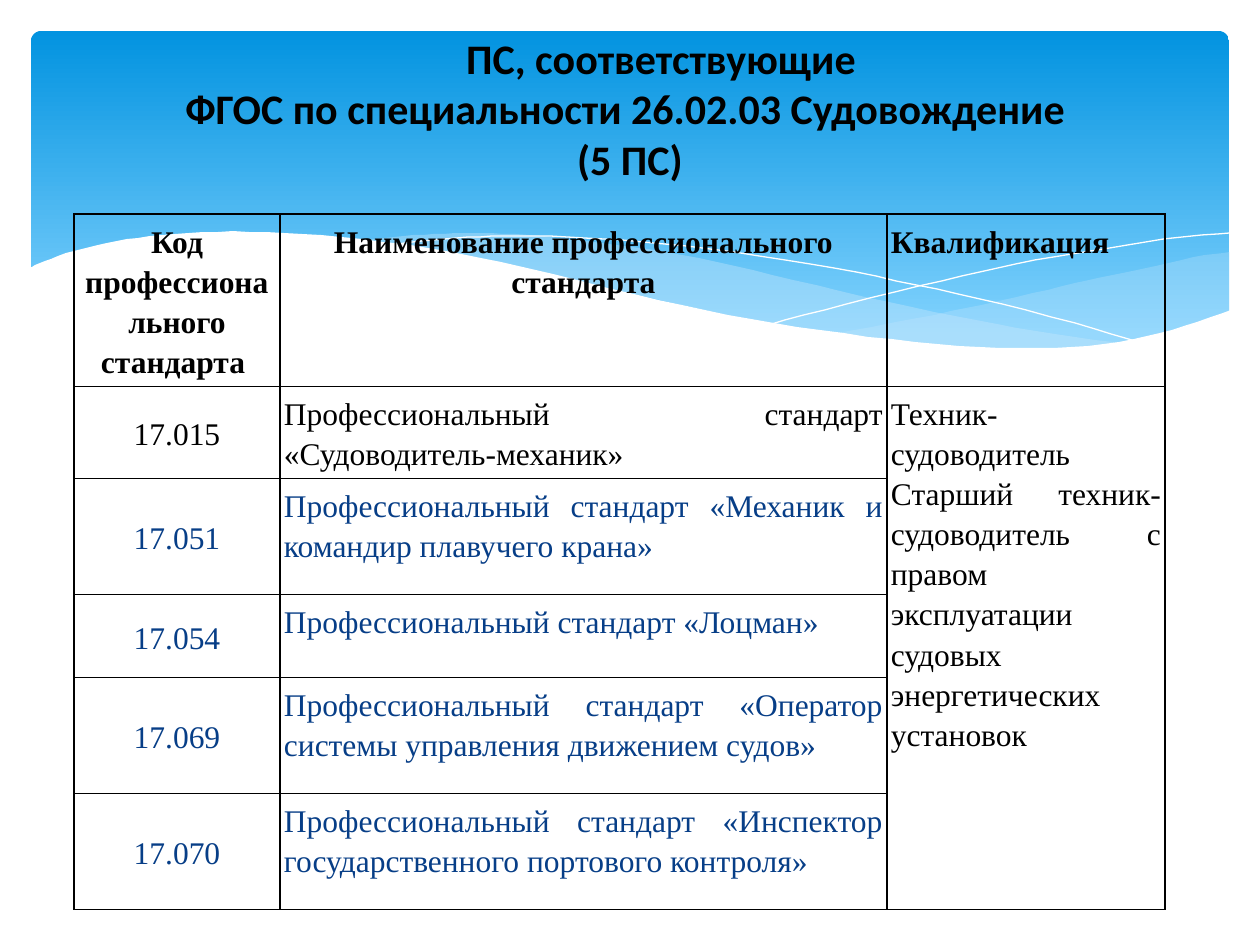
from dataclasses import dataclass
from lxml.etree import SubElement
from pptx import Presentation
from pptx.dml.color import RGBColor
from pptx.enum.text import MSO_ANCHOR, MSO_AUTO_SIZE, PP_ALIGN
from pptx.enum.shapes import MSO_SHAPE
from pptx.oxml.ns import qn
from pptx.util import Pt

PX = 914400 // 126


@dataclass(frozen=True)
class Theme:
    black: RGBColor = RGBColor.from_string("000000")
    white: RGBColor = RGBColor.from_string("FFFFFF")
    blue: RGBColor = RGBColor.from_string("073E87")
    wave: RGBColor = RGBColor.from_string("C6E7FC")
    sky_top: RGBColor = RGBColor.from_string("0293E0")
    sky_bottom: RGBColor = RGBColor.from_string("83D3FE")
    title_font: str = "Calibri"
    table_font: str = "Times New Roman"
    title_size: int = Pt(24)
    table_size: int = Pt(18)


def set_values(target, values):
    for name, value in values.items():
        setattr(target, name, value)


def smooth(points):
    curve = []
    padded = [points[0], *points, points[-1]]
    for a, b, c, d in zip(padded, padded[1:], padded[2:], padded[3:]):
        for t in (0, 0.25, 0.5, 0.75):
            curve.append(tuple(
                round((2 * q + (r - p) * t + (2 * p - 5 * q + 4 * r - s) * t**2
                       + (3 * q - p - 3 * r + s) * t**3) / 2, 2)
                for p, q, r, s in zip(a, b, c, d)))
    return curve + [points[-1]]


theme = Theme()
presentation = Presentation()
set_values(presentation, {"slide_width": 1260 * PX, "slide_height": 945 * PX})
slide = presentation.slides.add_slide(presentation.slide_layouts[5])

sky = slide.shapes.add_shape(MSO_SHAPE.ROUNDED_RECTANGLE, 31 * PX, 31 * PX, 1198 * PX, 340 * PX)
sky.adjustments[0] = 0.03
sky.shadow.inherit = False
sky.line.fill.background()
sky.fill.gradient()
sky.fill.gradient_angle = 270
for stop, position, color in zip(sky.fill.gradient_stops, (0, 0.9), (theme.sky_top, theme.sky_bottom)):
    stop.position = position
    stop.color.rgb = color

right_wave_top = [(833, 334), (918, 318), (982, 305), (1048, 290), (1085, 281), (1142, 269),
                  (1194, 257), (1230, 252)]
right_wave_bottom = [(1230, 311), (1196, 324), (1151, 336), (1098, 345), (1026, 350),
                     (954, 347), (871, 339), (833, 334)]
middle_wave_top = [(360, 241), (395, 237), (433, 234), (479, 233), (529, 235), (586, 241),
                   (648, 249), (717, 262), (793, 280), (889, 302), (976, 320), (1055, 334), (1125, 344)]
middle_wave_bottom = [(1125, 344), (1068, 349), (1003, 350), (926, 346), (838, 335), (735, 317),
                      (618, 290), (566, 280), (508, 266), (456, 255), (407, 247), (360, 241)]
falling_line = [(389, 246), (413, 242), (457, 238), (505, 236), (567, 237), (642, 242),
                (734, 252), (834, 268), (916, 285), (1002, 304), (1095, 329), (1143, 343)]
rising_line = [(772, 324), (847, 304), (942, 281), (1016, 264), (1091, 251), (1164, 239), (1230, 233)]
white_wave = [(29, 268), (45, 261), (74, 251), (107, 243), (150, 236), (203, 232), (266, 232),
              (341, 237), (428, 248), (527, 268), (634, 294), (728, 315), (820, 330), (915, 342),
              (1000, 348), (1071, 347), (1134, 339), (1184, 326), (1231, 310)]

outlines = [
    (smooth(right_wave_top) + smooth(right_wave_bottom), theme.wave, 29),
    (smooth(middle_wave_top) + smooth(middle_wave_bottom), theme.wave, 40),
    (smooth(falling_line), None, 100),
    (smooth(rising_line), None, 100),
    (smooth(white_wave) + [(1231, 415), (29, 415)], theme.white, 100),
]
for points, color, opacity in outlines:
    builder = slide.shapes.build_freeform(*points[0], scale=PX)
    builder.add_line_segments(points[1:], close=color is not None)
    shape = builder.convert_to_shape()
    shape.shadow.inherit = False
    if color is None:
        shape.fill.background()
        shape.line.color.rgb = theme.white
        shape.line.width = 0
        continue
    shape.line.fill.background()
    shape.fill.solid()
    shape.fill.fore_color.rgb = color
    if opacity < 100:
        color_element = shape.element.spPr.find(qn("a:solidFill"))[0]
        SubElement(color_element, qn("a:alpha"), val=str(opacity * 1000))

names = [
    ("17.015", "Профессиональный стандарт «Судоводитель-механик» "),
    ("17.051", "Профессиональный стандарт «Механик и командир плавучего крана»"),
    ("17.054", "Профессиональный стандарт «Лоцман»"),
    ("17.069", "Профессиональный стандарт «Оператор системы управления движением судов»"),
    ("17.070", "Профессиональный стандарт «Инспектор государственного портового контроля»"),
]
qualification = ("Техник-судоводитель\nСтарший техник-судоводитель с правом эксплуатации "
                 "судовых энергетических установок")
rows = [("Код профессионального стандарта ", "Наименование профессионального стандарта", "Квалификация")]
rows += [(code, name, "" if index else qualification) for index, (code, name) in enumerate(names)]

column_widths = (206, 607, 278)
row_heights = (116, 83, 116, 83, 116, 116)
table = slide.shapes.add_table(len(rows), len(column_widths), 74 * PX, 214 * PX,
                               sum(column_widths) * PX, sum(row_heights) * PX).table
set_values(table, {"first_row": False, "horz_banding": False})
for column, width in zip(table.columns, column_widths):
    column.width = width * PX
for row, height in zip(table.rows, row_heights):
    row.height = height * PX
table.cell(1, 2).merge(table.cell(5, 2))

for row_index, texts in enumerate(rows):
    for column_index, text in enumerate(texts):
        cell = table.cell(row_index, column_index)
        header = row_index == 0
        code = column_index == 0
        set_values(cell, {
            "margin_left": 4 * PX, "margin_right": 4 * PX, "margin_top": 6 * PX, "margin_bottom": 6 * PX,
            "vertical_anchor": MSO_ANCHOR.MIDDLE if code and not header else MSO_ANCHOR.TOP,
        })
        properties = cell._tc.get_or_add_tcPr()
        for side in ("a:lnL", "a:lnR", "a:lnT", "a:lnB"):
            border = SubElement(properties, qn(side), w=str(Pt(1)))
            SubElement(SubElement(border, qn("a:solidFill")), qn("a:srgbClr"), val=str(theme.black))
        cell.fill.background()
        if not text:
            continue
        cell.text_frame.text = text
        for paragraph_index, paragraph in enumerate(cell.text_frame.paragraphs):
            if column_index == 2 and paragraph_index == 0:
                alignment = PP_ALIGN.LEFT
            elif header or code:
                alignment = PP_ALIGN.CENTER
            else:
                alignment = PP_ALIGN.JUSTIFY
            set_values(paragraph, {"alignment": alignment, "line_spacing": 1.15})
            font = paragraph.runs[0].font
            set_values(font, {"name": theme.table_font, "size": theme.table_size, "bold": header})
            font.color.rgb = theme.blue if row_index > 1 and column_index < 2 else theme.black

title = slide.shapes.title
set_values(title, {"left": 63 * PX, "top": 47 * PX, "width": 1134 * PX, "height": 172 * PX})
title.element.getparent().append(title.element)
set_values(title.text_frame, {
    "word_wrap": True, "auto_size": MSO_AUTO_SIZE.NONE, "vertical_anchor": MSO_ANCHOR.MIDDLE,
    "margin_top": 6 * PX, "margin_bottom": 56 * PX,
})
paragraph = title.text_frame.paragraphs[0]
paragraph.alignment = PP_ALIGN.CENTER
paragraph._p.get_or_add_pPr().set("indent", str(62 * PX))
title_lines = ("ПС, соответствующие", "ФГОС по специальности 26.02.03 Судовождение ", "(5 ПС)")
for index, line in enumerate(title_lines):
    if index:
        paragraph.add_line_break()
    run = paragraph.add_run()
    run.text = line
    set_values(run.font, {"name": theme.title_font, "size": theme.title_size, "bold": True})
    run.font.color.rgb = theme.black

presentation.save("out.pptx")
